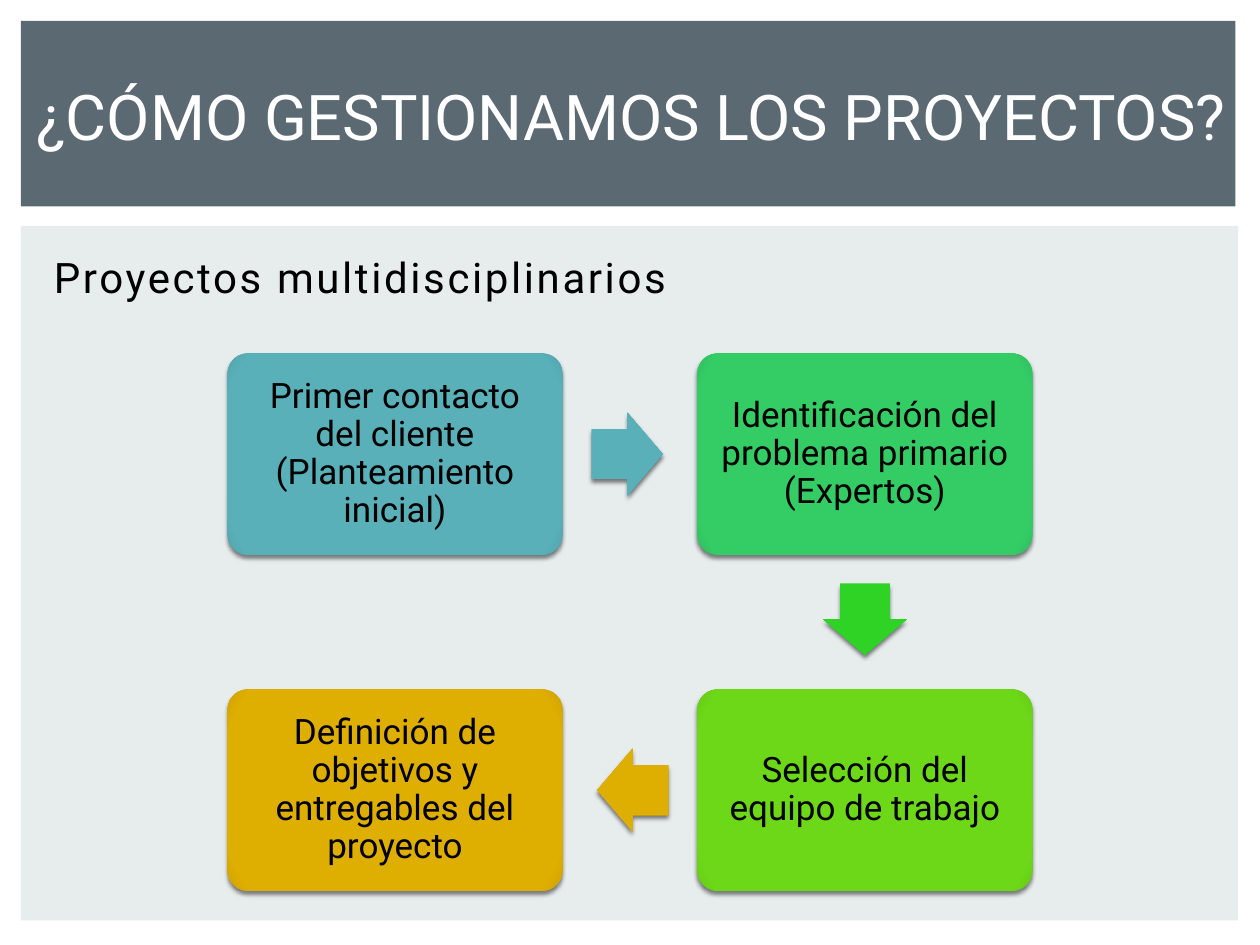
from lxml.etree import SubElement
from pptx import Presentation
from pptx.dml.color import RGBColor
from pptx.enum.shapes import MSO_SHAPE
from pptx.enum.text import MSO_ANCHOR, MSO_AUTO_SIZE, PP_ALIGN
from pptx.oxml import parse_xml
from pptx.oxml.ns import nsdecls, qn
from pptx.util import Pt

COLORS = {
    "header": "5B6973", "panel": "E7ECED", "white": "FFFFFF", "black": "000000",
    "teal": "59B0B9", "teal_edge": "53A4AC",
    "green": "34CD65", "green_edge": "30BF5E",
    "leaf": "2FD325", "leaf_edge": "2CC522",
    "lime": "6DD818", "lime_edge": "66C916",
    "gold": "DEAE00", "gold_edge": "CFA200",
}
STEPS = [
    ("Primer contacto del cliente (Planteamiento inicial)", "teal", 0, 0),
    ("Identificación del problema primario (Expertos)", "green", 1, 0),
    ("Selección del equipo de trabajo", "lime", 1, 1),
    ("Definición de objetivos y entregables del proyecto", "gold", 0, 1),
]
ARROWS = [("teal", 0), ("leaf", 90), ("gold", 180)]
DIRECTIONS = {0: (1, 0), 90: (0, 1), 180: (-1, 0)}
STEP_W, STEP_H = 191.5, 115
ARROW_W, ARROW_H, ARROW_GAP = 40.5, 47.5, 16.7


def write(frame, text, size, color, align, **frame_format):
    """Fill a text frame with one formatted paragraph and return it."""
    settings = {"word_wrap": True, "auto_size": MSO_AUTO_SIZE.NONE, **frame_format}
    for name, value in settings.items():
        setattr(frame, name, value)
    paragraph = frame.paragraphs[0]
    paragraph.alignment = align
    run = paragraph.add_run()
    run.text = text
    for name, value in {"name": "Roboto", "size": Pt(size)}.items():
        setattr(run.font, name, value)
    run.font.color.rgb = RGBColor.from_string(COLORS[color])
    return paragraph


def add_plain(slide, kind, box):
    """Add a preset shape without line or shadow."""
    shape = slide.shapes.add_shape(kind, *map(Pt, box))
    shape.shadow.inherit = False
    shape.line.fill.background()
    return shape


def add_panel(slide, box, color):
    """Add a flat background rectangle."""
    panel = add_plain(slide, MSO_SHAPE.RECTANGLE, box)
    panel.fill.solid()
    panel.fill.fore_color.rgb = RGBColor.from_string(COLORS[color])


def add_glossy(slide, kind, box, color):
    """Add a shape with a darker rim and a soft shadow below."""
    shape = add_plain(slide, kind, box)
    stops = "".join(
        f'<a:gs pos="{position}"><a:srgbClr val="{COLORS[name]}"/></a:gs>'
        for position, name in [(0, color), (90000, color), (100000, color + "_edge")]
    )
    properties = shape._element.spPr
    properties.find(qn("a:prstGeom")).addnext(parse_xml(
        f'<a:gradFill {nsdecls("a")} rotWithShape="1"><a:gsLst>{stops}</a:gsLst>'
        '<a:path path="circle"><a:fillToRect l="100000" t="100000" r="100000" '
        'b="100000"/></a:path></a:gradFill>'
    ))
    shadow = SubElement(
        properties.find(qn("a:effectLst")), qn("a:outerShdw"),
        blurRad=str(Pt(2.5)), dist=str(Pt(2)), dir="5400000", rotWithShape="0",
    )
    shade = SubElement(shadow, qn("a:srgbClr"), val=COLORS["black"])
    SubElement(shade, qn("a:alpha"), val="50000")
    return shape


def add_step(slide, box, text, color):
    """Add one rounded step of the process."""
    step = add_glossy(slide, MSO_SHAPE.ROUNDED_RECTANGLE, box, color)
    step.adjustments[0] = 0.1
    margins = {f"margin_{side}": Pt(6) for side in ("left", "top", "right", "bottom")}
    paragraph = write(step.text_frame, text, 20, "black", PP_ALIGN.CENTER,
                      vertical_anchor=MSO_ANCHOR.MIDDLE, **margins)
    paragraph.line_spacing = 0.9


def add_step_arrow(slide, box, color, angle):
    """Add an arrow leaving the side of the step box that the angle points to."""
    left, top, width, height = box
    dx, dy = DIRECTIONS[angle]
    reach = ARROW_GAP + ARROW_W / 2
    center_x = left + width / 2 + dx * (width / 2 + reach)
    center_y = top + height / 2 + dy * (height / 2 + reach)
    arrow_box = (center_x - ARROW_W / 2, center_y - ARROW_H / 2, ARROW_W, ARROW_H)
    arrow = add_glossy(slide, MSO_SHAPE.RIGHT_ARROW, arrow_box, color)
    arrow.rotation = angle
    arrow.adjustments[0] = 0.6
    arrow.adjustments[1] = 0.5


def add_process(slide, box):
    """Place the four steps in the corners of the box, with arrows between them."""
    left, top, width, height = box
    step_boxes = [
        (left + column * (width - STEP_W), top + row * (height - STEP_H), STEP_W, STEP_H)
        for _, _, column, row in STEPS
    ]
    for (text, color, _, _), step_box in zip(STEPS, step_boxes):
        add_step(slide, step_box, text, color)
    for (color, angle), step_box in zip(ARROWS, step_boxes):
        add_step_arrow(slide, step_box, color, angle)


def add_subtitle(slide, box):
    """Add the letter-spaced line above the process."""
    subtitle = slide.shapes.add_textbox(*map(Pt, box))
    paragraph = write(subtitle.text_frame, "Proyectos multidisciplinarios", 24,
                      "black", PP_ALIGN.LEFT, margin_left=Pt(10.8))
    paragraph.runs[0].font._element.set("spc", "150")


def add_title(slide, box):
    """Move the title placeholder onto the header and format it."""
    title = slide.shapes.title
    for name, value in zip(("left", "top", "width", "height"), box):
        setattr(title, name, Pt(value))
    write(title.text_frame, "¿CÓMO GESTIONAMOS LOS PROYECTOS?", 36, "white",
          PP_ALIGN.CENTER, vertical_anchor=MSO_ANCHOR.MIDDLE)
    slide.shapes._spTree.append(title._element)


def main():
    """Build and save the slide."""
    deck = Presentation()
    deck.slide_width, deck.slide_height = Pt(720), Pt(540)
    slide = deck.slides.add_slide(deck.slide_layouts[5])
    add_panel(slide, (12, 129, 695.5, 397), "panel")
    add_panel(slide, (12, 12, 694, 106), "header")
    add_process(slide, (130, 202, 460, 307))
    add_subtitle(slide, (20, 140, 648, 42))
    add_title(slide, (0.7, 15, 720, 102))
    deck.save("out.pptx")


if __name__ == "__main__":
    main()
